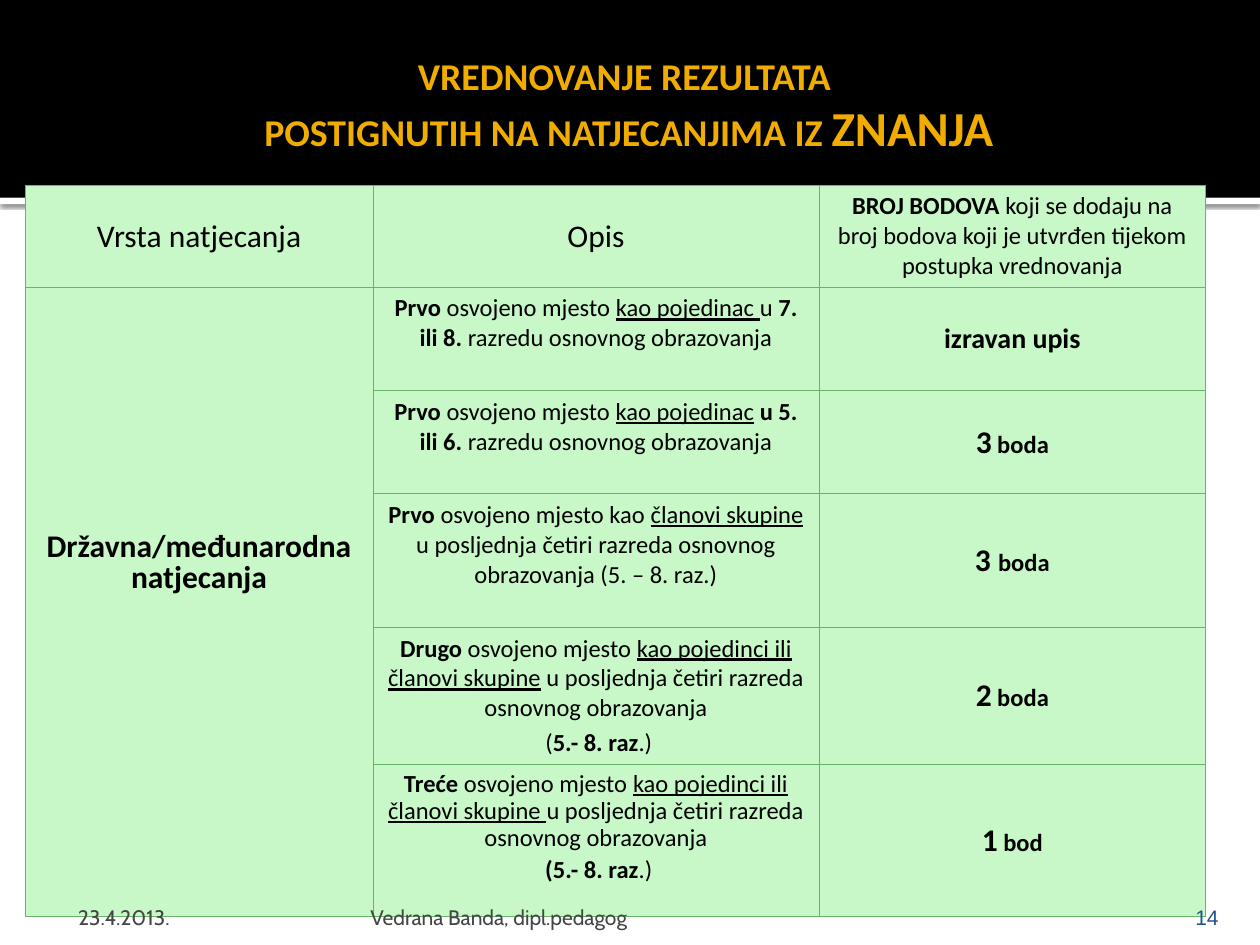
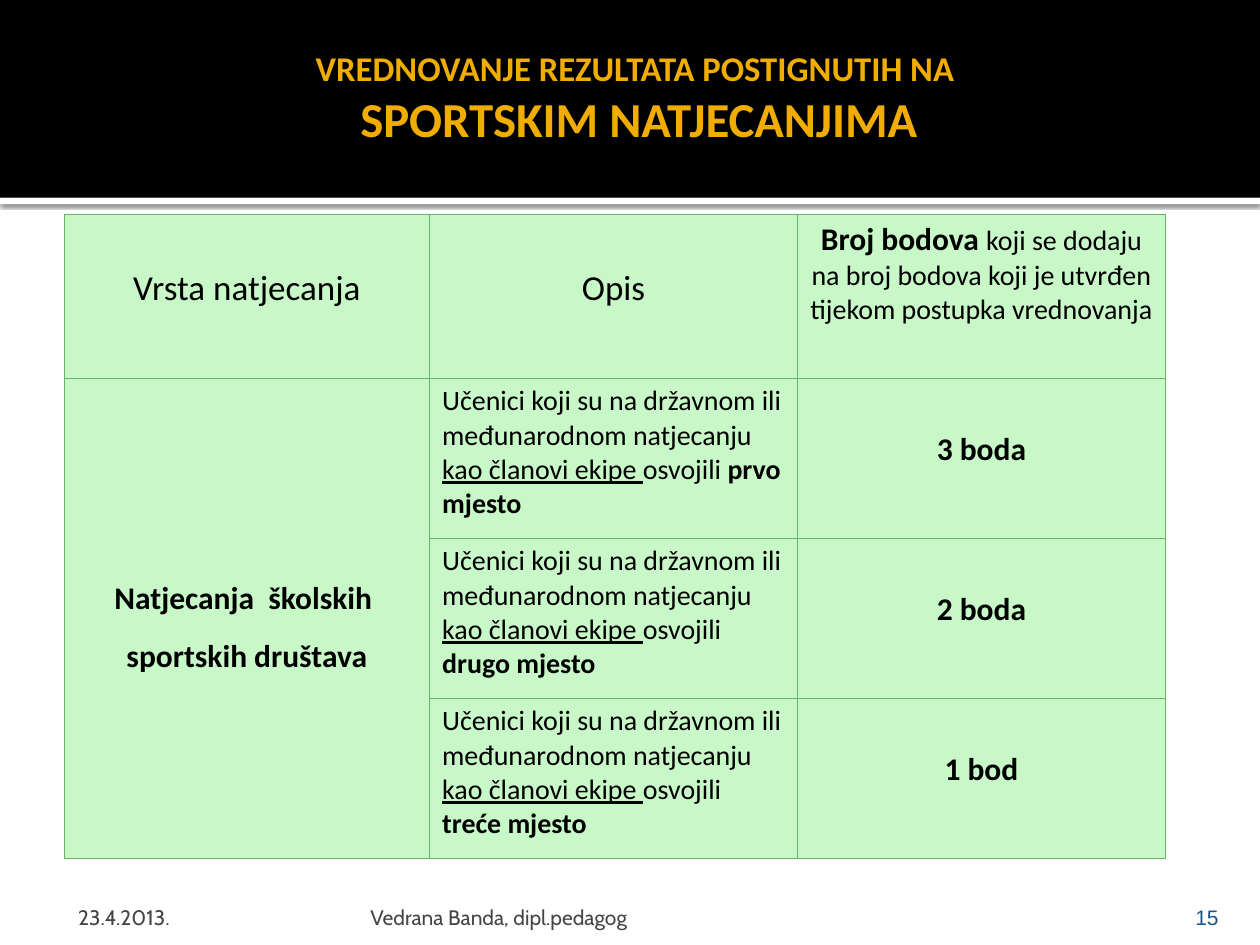
import pptx
import pptx.dml.color
import pptx.enum.shapes
import pptx.enum.text
import pptx.oxml
import pptx.util
import pptx.oxml.ns

Inches = pptx.util.Inches
Pt = pptx.util.Pt
ALIGN = pptx.enum.text.PP_ALIGN
ANCHOR = pptx.enum.text.MSO_ANCHOR

BLACK, WHITE, GOLD = "000000", "FFFFFF", "F0AD00"
CELL_FILL, CELL_BORDER = "C8F7C8", "67B569"
FOOTER_GREY, NUMBER_BLUE = "454545", "1D538B"
NAMESPACE = pptx.oxml.ns.nsdecls("a")
BREAK = "\v"


def rgb(value):
    return pptx.dml.color.RGBColor.from_string(value)


def bold(text, size=None):
    return text, "b", size


def underlined(text):
    return text, "u", None


def write_text(frame, paragraphs, size=14, font="Calibri", color=BLACK,
               style="", align=ALIGN.CENTER, line_spacing=None, space_before=0):
    frame.word_wrap = True
    for index, runs in enumerate(paragraphs):
        paragraph = frame.add_paragraph() if index else frame.paragraphs[0]
        paragraph.alignment = align
        paragraph.space_before = Pt(space_before if index else 0)
        if line_spacing:
            paragraph.line_spacing = line_spacing
        for part in runs:
            if part == BREAK:
                paragraph.add_line_break()
                continue
            text, run_style, run_size = (part, style, None) if isinstance(part, str) else part
            run = paragraph.add_run()
            run.text = text
            run.font.name = font
            run.font.size = Pt(run_size or size)
            run.font.color.rgb = rgb(color)
            run.font.bold = "b" in run_style
            run.font.underline = "u" in run_style


def set_margins(target, left=0.1, top=0.05, right=0.1, bottom=0.05):
    target.margin_left, target.margin_top = Inches(left), Inches(top)
    target.margin_right, target.margin_bottom = Inches(right), Inches(bottom)


def add_band(slide, top, height, color):
    band = slide.shapes.add_shape(
        pptx.enum.shapes.MSO_SHAPE.RECTANGLE,
        Inches(0), Inches(top), Inches(10), Inches(height))
    band.shadow.inherit = False
    band.fill.solid()
    band.fill.fore_color.rgb = rgb(color)
    band.line.fill.background()
    return band


def add_header(slide, runs, box):
    strip = add_band(slide, 1.57, 0.05, WHITE)
    effects = strip.element.spPr.find(pptx.oxml.ns.qn("a:effectLst"))
    effects.append(pptx.oxml.parse_xml(
        f'<a:outerShdw {NAMESPACE} blurRad="{Pt(2.5)}" dist="{Pt(0.8)}" dir="5400000">'
        f'<a:srgbClr val="{BLACK}"><a:alpha val="60000"/></a:srgbClr></a:outerShdw>'))
    add_band(slide, 0, 1.57, BLACK)
    title = slide.shapes.title
    title.element.getparent().append(title.element)
    title.left, title.top, title.width, title.height = map(Inches, box)
    frame = title.text_frame
    frame.auto_size = pptx.enum.text.MSO_AUTO_SIZE.NONE
    frame.vertical_anchor = ANCHOR.MIDDLE
    set_margins(frame, right=0.05)
    write_text(frame, [runs], size=21.6, color=GOLD, style="b")


def add_footer(slide, number):
    fields = [
        (f"{number}", 8.97, 0.8, 0.1, 0.1, "Arial", NUMBER_BLUE, ALIGN.RIGHT),
        ("23.4.2013.", 0.5, 2.33, 0.12, 0.05, "Cabin", FOOTER_GREY, ALIGN.LEFT),
        ("Vedrana Banda, dipl.pedagog", 2.89, 6.02, 0.05, 0.05, "Cabin", FOOTER_GREY, ALIGN.LEFT),
    ]
    for text, left, width, inset_left, inset_right, font, color, align in fields:
        frame = slide.shapes.add_textbox(
            Inches(left), Inches(7.08), Inches(width), Inches(0.3)).text_frame
        frame.vertical_anchor = ANCHOR.BOTTOM
        set_margins(frame, left=inset_left, right=inset_right, bottom=0)
        write_text(frame, [[text]], size=12, font=font, color=color, align=align)


def style_cell(cell):
    cell.fill.solid()
    cell.fill.fore_color.rgb = rgb(CELL_FILL)
    properties = cell._tc.get_or_add_tcPr()
    for index, side in enumerate("LRTB"):
        properties.insert(index, pptx.oxml.parse_xml(
            f'<a:ln{side} {NAMESPACE} w="{Pt(0.5)}"><a:solidFill>'
            f'<a:srgbClr val="{CELL_BORDER}"/></a:solidFill></a:ln{side}>'))


def add_points_table(slide, left, top, columns, rows):
    table = slide.shapes.add_table(
        len(rows), len(columns), Inches(left), Inches(top),
        Inches(sum(columns)), Inches(sum(rows))).table
    table.first_row = table.horz_banding = False
    for column, width in zip(table.columns, columns):
        column.width = Inches(width)
    for row, height in zip(table.rows, rows):
        row.height = Inches(height)
    for cell in table.iter_cells():
        style_cell(cell)
    table.cell(1, 0).merge(table.cell(len(rows) - 1, 0))
    return table


def fill_cell(table, row, column, paragraphs, anchor=ANCHOR.MIDDLE,
              top=0.05, bottom=0.05, **text_format):
    cell = table.cell(row, column)
    cell.vertical_anchor = anchor
    set_margins(cell, top=top, bottom=bottom)
    write_text(cell.text_frame, paragraphs, **text_format)


def build_knowledge_slide(slide):
    add_header(slide, ["VREDNOVANJE REZULTATA ", BREAK, "POSTIGNUTIH NA NATJECANJIMA IZ ",
                       bold("ZNANJA", 27.9)], (0.59, 0.36, 8.75, 0.94))
    table = add_points_table(slide, 0.2, 1.47, [2.76, 3.54, 3.07],
                             [0.81, 0.82, 0.82, 1.06, 1.09, 1.2])
    fill_cell(table, 0, 0, [["Vrsta natjecanja"]], size=18)
    fill_cell(table, 0, 1, [["Opis"]], size=18)
    fill_cell(table, 0, 2, [[bold("BROJ BODOVA "),
                             "koji se dodaju na broj bodova koji je utvrđen tijekom postupka vrednovanja"]],
              anchor=ANCHOR.TOP)
    fill_cell(table, 1, 0, [["Državna/međunarodna"], ["natjecanja"]],
              bottom=0.65, size=18, style="b", line_spacing=0.8)

    place = "osvojeno mjesto "
    grade = "razredu osnovnog obrazovanja"
    grades = "u posljednja četiri razreda osnovnog obrazovanja"
    grade_range = [bold("5.- 8. raz"), ".)"]
    results = [
        ([[bold("Prvo "), place, underlined("kao pojedinac "), "u ", bold("7. ili 8. "), grade]],
         [bold("izravan upis", 16)]),
        ([[bold("Prvo "), place, underlined("kao pojedinac"), " ", bold("u 5. ili 6. "), grade]],
         [bold("3", 18), " boda"]),
        ([[bold("Prvo "), place + "kao ", underlined("članovi skupine "),
           grades + " (5. – 8. raz.)"]],
         [bold("3 ", 18), "boda"]),
        ([[bold("Drugo "), place, underlined("kao pojedinci ili članovi skupine"), " " + grades],
          [" (", *grade_range]],
         [bold("2", 18), " boda"]),
        ([[bold("Treće "), place, underlined("kao pojedinci ili članovi skupine "), grades],
          [" ", bold("("), *grade_range]],
         [bold("1", 18), " bod"]),
    ]
    for row, (description, points) in enumerate(results, 1):
        fill_cell(table, row, 1, description, anchor=ANCHOR.TOP, space_before=3,
                  line_spacing=0.9 if row == len(results) else None)
        fill_cell(table, row, 2, [points], style="b")
    add_footer(slide, 14)


def build_sports_slide(slide):
    add_header(slide, [bold("VREDNOVANJE REZULTATA POSTIGNUTIH NA ", 19.8), BREAK,
                       bold("SPORTSKIM NATJECANJIMA", 27.9)], (0.67, 0.36, 8.75, 0.82))
    table = add_points_table(slide, 0.51, 1.7, [2.9, 2.92, 2.92], [1.3] + [1.27] * 3)
    lowered = {"anchor": ANCHOR.TOP, "top": 0.42}
    fill_cell(table, 0, 0, [["Vrsta natjecanja"]], size=20, **lowered)
    fill_cell(table, 0, 1, [["Opis"]], size=20, **lowered)
    fill_cell(table, 0, 2, [[bold("Broj bodova ", 18),
                             "koji se dodaju na broj bodova koji je utvrđen tijekom postupka vrednovanja"]],
              anchor=ANCHOR.TOP, size=16)
    fill_cell(table, 1, 0, [["Natjecanja  školskih  sportskih društava"]],
              size=18, style="b", line_spacing=1.5)
    results = [("prvo", "3 boda"), ("drugo", "2 boda"), ("treće", "1 bod")]
    for row, (rank, points) in enumerate(results, 1):
        fill_cell(table, row, 1,
                  [["Učenici koji su na državnom ili međunarodnom natjecanju ",
                    underlined("kao članovi ekipe "), "osvojili ", bold(f"{rank} mjesto")]],
                  anchor=ANCHOR.TOP, size=16, align=ALIGN.LEFT)
        fill_cell(table, row, 2, [[points]], size=18, style="b", **lowered)
    add_footer(slide, 15)


def main():
    presentation = pptx.Presentation()
    presentation.slide_width, presentation.slide_height = Inches(10), Inches(7.5)
    title_only = presentation.slide_layouts[5]
    for build in (build_knowledge_slide, build_sports_slide):
        build(presentation.slides.add_slide(title_only))
    presentation.save("out.pptx")


if __name__ == "__main__":
    main()
